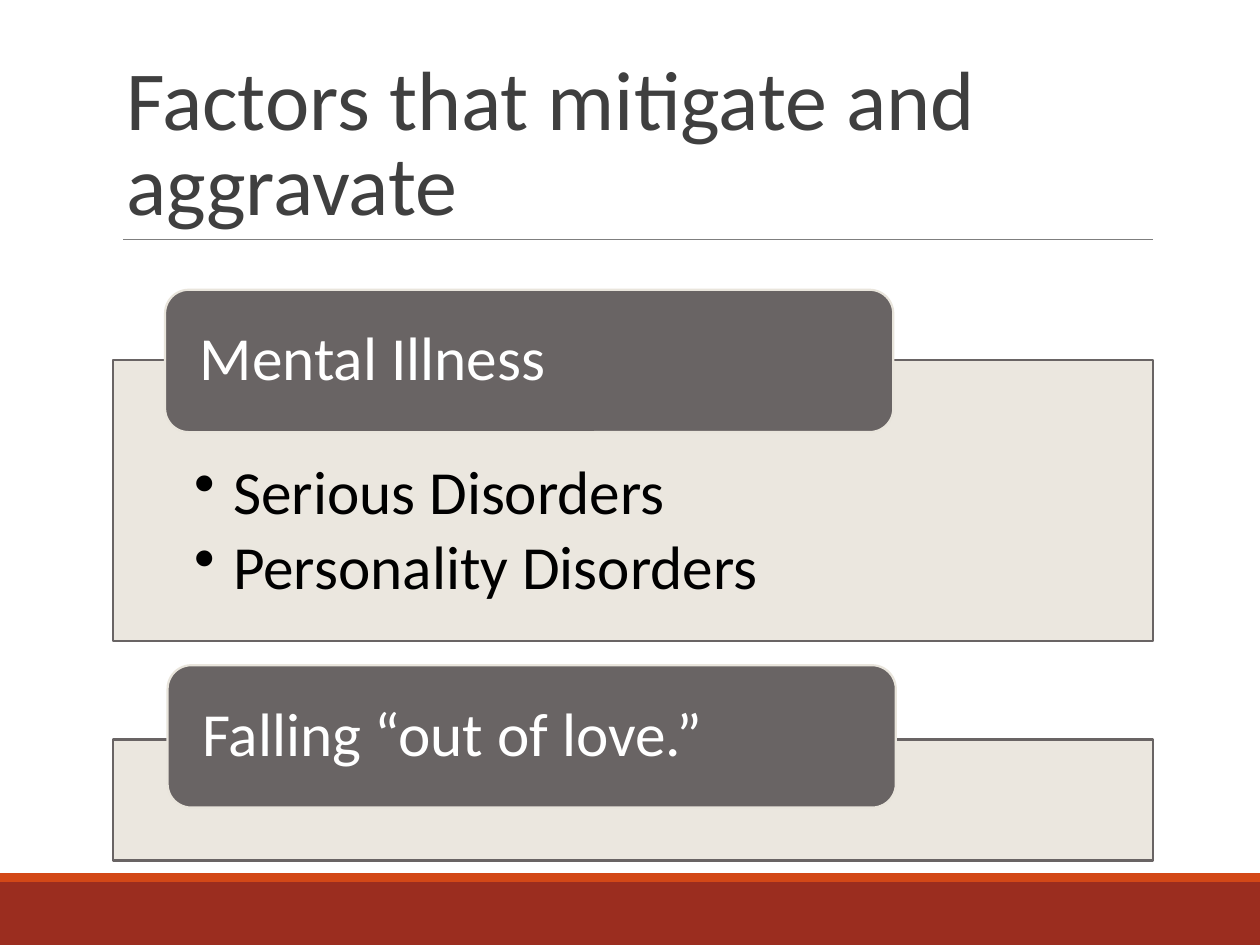
import pptx
import pptx.util
import pptx.dml.color
import pptx.enum.shapes
import pptx.enum.text
import pptx.oxml
import lxml.etree
from pptx.util import Inches

SHAPES = pptx.enum.shapes.MSO_SHAPE
ANCHOR = pptx.enum.text.MSO_ANCHOR
GRAY, BEIGE = "696464", "E9E5DC"


def paint(color_format, color):
    color_format.solid()
    color_format.fore_color.rgb = pptx.dml.color.RGBColor.from_string(color)


def add_box(kind, left, top, width, height, fill, line=None):
    box = page.shapes.add_shape(kind, Inches(left), Inches(top), Inches(width), Inches(height))
    box.shadow.inherit = False
    paint(box.fill, fill)
    if line:
        paint(box.line.fill, line)
        box.line.width = pptx.util.Pt(1.25)
    else:
        box.line.fill.background()
    return box


deck = pptx.Presentation()
deck.slide_width, deck.slide_height = Inches(10), Inches(7.5)
page = deck.slides.add_slide(deck.slide_layouts[5])

# Footer bands and the rule under the title
add_box(SHAPES.RECTANGLE, 0, 7, 10, 0.5, "9B2D1F")
add_box(SHAPES.RECTANGLE, 0, 6.93, 10, 0.07, "D34817")
rule = page.shapes.add_connector(pptx.enum.shapes.MSO_CONNECTOR.STRAIGHT,
                                 Inches(0.98), Inches(1.9), Inches(9.15), Inches(1.9))
paint(rule.line.fill, "7F7F7F")
rule.line.width = pptx.util.Pt(0.75)
lxml.etree.SubElement(rule._element.spPr, pptx.oxml.ns.qn("a:effectLst"))

# Title
title = page.shapes.title
title.left, title.top, title.width, title.height = map(Inches, (0.9, 0.31, 8.25, 1.59))
title.text_frame.text = "Factors that mitigate and aggravate"
title.text_frame.auto_size = pptx.enum.text.MSO_AUTO_SIZE.NONE
title.text_frame.vertical_anchor = ANCHOR.BOTTOM

# Sections: panel top, panel height, label left, label top, label, bullet points
sections = [
    (2.86, 2.23, 1.31, 2.3, "Mental Illness", ["Serious Disorders", "Personality Disorders"]),
    (5.87, 0.96, 1.33, 5.28, "Falling “out of love.”", []),
]
styled = [(title, 48, "3F3F3F", 0.85)]
for panel_top, panel_height, label_left, label_top, label_text, points in sections:
    panel = add_box(SHAPES.RECTANGLE, 0.9, panel_top, 8.25, panel_height, BEIGE, GRAY)
    fill_color = panel._element.spPr.find(".//" + pptx.oxml.ns.qn("a:srgbClr"))
    lxml.etree.SubElement(fill_color, pptx.oxml.ns.qn("a:alpha"), val="90000")
    if points:
        frame = panel.text_frame
        frame.text = "\n".join(points)
        frame.vertical_anchor = ANCHOR.TOP
        frame.margin_left = frame.margin_right = Inches(0.64)
        frame.margin_top, frame.margin_bottom = Inches(0.8), Inches(0.27)
        for index, para in enumerate(frame.paragraphs):
            para.space_before = pptx.util.Pt(5.2 if index else 0)
            properties = para._p.get_or_add_pPr()
            properties.set("marL", str(Inches(0.31)))
            properties.set("indent", str(-Inches(0.31)))
            lxml.etree.SubElement(properties, pptx.oxml.ns.qn("a:buChar"), char="•")
        styled.append((panel, 35, "000000", 0.9))

    label = add_box(SHAPES.ROUNDED_RECTANGLE, label_left, label_top, 5.78, 1.13, GRAY, BEIGE)
    frame = label.text_frame
    frame.text = label_text
    frame.vertical_anchor = ANCHOR.MIDDLE
    frame.margin_left = frame.margin_right = Inches(0.22)
    frame.margin_top = frame.margin_bottom = 0
    styled.append((label, 35, "FFFFFF", 0.9))

# Text formatting
for box, size, color, spacing in styled:
    for para in box.text_frame.paragraphs:
        para.alignment = pptx.enum.text.PP_ALIGN.LEFT
        para.line_spacing = spacing
        for span in para.runs:
            span.font.name = "Calibri"
            span.font.size = pptx.util.Pt(size)
            paint(span.font.fill, color)

deck.save("out.pptx")
